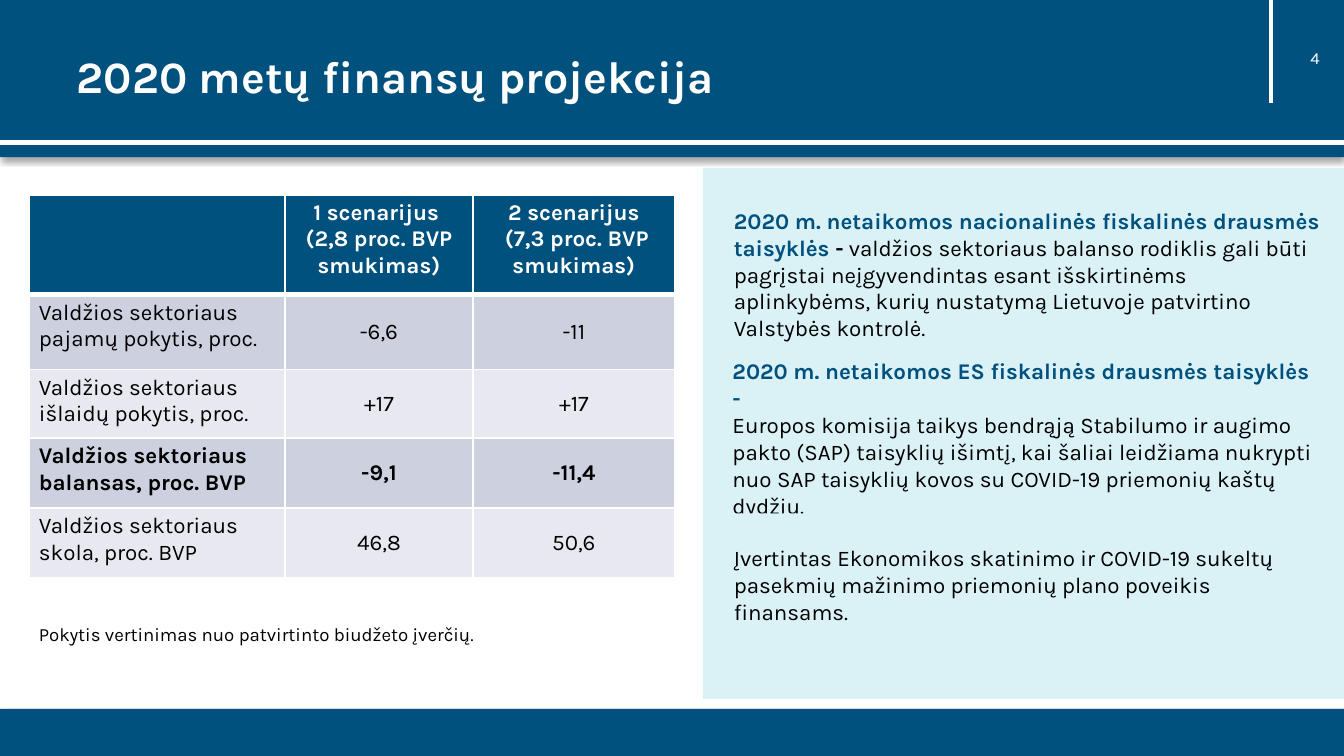
from copy import deepcopy
from typing import NamedTuple

from lxml import etree
from pptx import Presentation
from pptx.dml.color import RGBColor
from pptx.enum import shapes as kinds, text as tx
from pptx.oxml import parse_xml
from pptx.oxml.ns import nsdecls, qn
from pptx.util import Inches, Pt

NAVY, WHITE, BLACK, PALE = "00517D", "FFFFFF", "000000", "DAF1F6"
DARK, LIGHT = "CDD1DF", "E8E9F0"
LEFT, MID, RIGHT = tx.PP_ALIGN.LEFT, tx.PP_ALIGN.CENTER, tx.PP_ALIGN.RIGHT
WIDE = 10
HIGH = WIDE * 9 / 16


class Box(NamedTuple):
    left: float
    top: float
    width: float
    height: float

    def place(self) -> list:
        return [Inches(n) for n in self]


class Piece(NamedTuple):
    text: str
    color: str = BLACK
    bold: bool = False
    size: float = 12


class Note(NamedTuple):
    box: Box
    paras: list


class Row(NamedTuple):
    height: float
    fill: str
    cells: tuple
    bold: bool = False
    color: str = BLACK


def paint(target, color: str) -> None:
    """Give a fill one solid colour."""
    target.solid()
    target.fore_color.rgb = RGBColor.from_string(color)


def inset(target) -> None:
    """Set the margins of a text frame or a table cell."""
    target.margin_left = target.margin_right = Inches(0.07)
    target.margin_top = target.margin_bottom = Inches(0.04)


def write(frame, paras: list, align=LEFT) -> None:
    """Write paragraphs of pieces; \\v in a piece breaks the line."""
    for i, pieces in enumerate(paras):
        para = frame.add_paragraph() if i else frame.paragraphs[0]
        para.alignment = align
        for piece in pieces:
            for j, part in enumerate(piece.text.split("\v")):
                if j:
                    para.add_line_break()
                run = para.add_run()
                run.text = part
                font = run.font
                font.name, font.size, font.bold = "Karla", Pt(piece.size), piece.bold
                paint(font.fill, piece.color)
                if j:
                    # The break takes the type size of its neighbour
                    run._r.getprevious().append(deepcopy(run._r.rPr))


def fill(frame, paras: list, align=LEFT) -> None:
    """Write into the frame of a shape, centred from top to bottom."""
    frame.word_wrap = True
    frame.vertical_anchor = tx.MSO_ANCHOR.MIDDLE
    inset(frame)
    write(frame, paras, align)


def block(slide, box: Box, color: str):
    shape = slide.shapes.add_shape(kinds.MSO_SHAPE.RECTANGLE, *box.place())
    shape.shadow.inherit = False
    paint(shape.fill, color)
    shape.line.fill.background()
    return shape


def band(slide, box: Box) -> None:
    """Draw a navy band with a soft shadow below it."""
    shape = block(slide, box, NAVY)
    glow = shape._element.spPr.find(qn("a:effectLst"))
    glow.append(parse_xml(
        f'<a:outerShdw {nsdecls("a")} blurRad="{Pt(3.1)}" dist="{Pt(1.8)}" '
        'dir="5400000" rotWithShape="0"><a:srgbClr val="000000">'
        '<a:alpha val="35000"/></a:srgbClr></a:outerShdw>'))


def rule(slide, x1: float, y1: float, x2: float, y2: float) -> None:
    line = slide.shapes.add_connector(
        kinds.MSO_CONNECTOR.STRAIGHT, *(Inches(n) for n in (x1, y1, x2, y2)))
    paint(line.line.fill, WHITE)
    line.line.width = Pt(2.25)
    etree.SubElement(line._element.spPr, qn("a:effectLst"))


def label(slide, box: Box, piece: Piece, align=LEFT):
    frame = slide.shapes.add_textbox(*box.place()).text_frame
    fill(frame, [[piece]], align)
    return frame


def edge(cell, low: float) -> None:
    """Draw white cell borders, the bottom one low points wide."""
    props = cell._tc.get_or_add_tcPr()
    for side, width in zip("LRTB", (1, 1, 1, low)):
        props.append(parse_xml(
            f'<a:ln{side} {nsdecls("a")} w="{Pt(width)}"><a:solidFill>'
            f'<a:srgbClr val="{WHITE}"/></a:solidFill></a:ln{side}>'))


def grid(slide, box: Box, widths: tuple, rows: list) -> None:
    table = slide.shapes.add_table(len(rows), len(widths), *box.place()).table
    for col, width in zip(table.columns, widths):
        col.width = Inches(width)
    for i, row in enumerate(rows):
        table.rows[i].height = Inches(row.height)
        for j, words in enumerate(row.cells):
            cell = table.cell(i, j)
            edge(cell, 1 if i else 3)
            paint(cell.fill, row.fill)
            inset(cell)
            if words:
                write(cell.text_frame, [[Piece(words, row.color, row.bold)]],
                      MID if j else LEFT)
            if i and j:
                cell.vertical_anchor = tx.MSO_ANCHOR.MIDDLE


ROWS = [
    Row(0.74, NAVY, ("", "1 scenarijus \v(2,8 proc. BVP smukimas)",
                     "2 scenarijus\v (7,3 proc. BVP smukimas)"), True, WHITE),
    Row(0.56, DARK, ("Valdžios sektoriaus pajamų pokytis, proc.", "-6,6", "-11")),
    Row(0.51, LIGHT, ("Valdžios sektoriaus išlaidų pokytis, proc.", "+17", "+17")),
    Row(0.52, DARK, ("Valdžios sektoriaus balansas, proc. BVP", "-9,1", "-11,4"), True),
    Row(0.52, LIGHT, ("Valdžios sektoriaus skola, proc. BVP", "46,8", "50,6")),
]

NOTES = [
    Note(Box(5.39, 1.54, 4.51, 1), [[
        Piece("2020 m. netaikomos nacionalinės fiskalinės drausmės taisyklės ", NAVY, True),
        Piece("-", BLACK, True),
        Piece(" valdžios sektoriaus balanso rodiklis gali būti pagrįstai "
              "neįgyvendintas esant išskirtinėms aplinkybėms, kurių nustatymą "
              "Lietuvoje patvirtino Valstybės kontrolė.")]]),
    Note(Box(5.38, 2.73, 4.51, 1.06), [
        [Piece("2020 m. netaikomos ES fiskalinės drausmės taisyklės -", NAVY, True)],
        [Piece("Europos komisija taikys bendrąją Stabilumo ir augimo pakto (SAP) "
               "taisyklių išimtį, kai šaliai leidžiama nukrypti nuo SAP taisyklių "
               "kovos su COVID-19 priemonių kaštų dydžiu.")]]),
    Note(Box(5.39, 3.82, 4.51, 1.06), [[
        Piece("Įvertintas Ekonomikos skatinimo ir COVID-19 sukeltų pasekmių "
              "mažinimo priemonių plano poveikis finansams.")]]),
]


def main() -> None:
    deck = Presentation()
    deck.slide_width, deck.slide_height = Inches(WIDE), Inches(HIGH)
    slide = deck.slides.add_slide(deck.slide_layouts[6])

    band(slide, Box(0, 0, WIDE, 1.17))
    band(slide, Box(0, HIGH - 0.35, WIDE, 0.35))
    rule(slide, 9.46, 0, 9.46, 0.77)
    rule(slide, 0, 1.06, WIDE, 1.06)
    block(slide, Box(5.23, 1.25, 4.77, 3.95), PALE)

    title = label(slide, Box(0.5, 0.28, 8.95, 0.61),
                  Piece("2020 metų finansų projekcija", WHITE, True, 24))
    title.paragraphs[0].line_spacing = 0.9
    for note in NOTES[:2]:
        fill(block(slide, note.box, PALE).text_frame, note.paras)
    grid(slide, Box(0.22, 1.45, 4.8, 2.85), (1.9, 1.4, 1.5), ROWS)
    last = NOTES[2]
    fill(block(slide, last.box, PALE).text_frame, last.paras)
    foot = label(slide, Box(0.22, 4.6, 3.44, 0.24),
                 Piece("Pokytis vertinimas nuo patvirtinto biudžeto įverčių.", size=10))
    foot.word_wrap = False
    foot.auto_size = tx.MSO_AUTO_SIZE.SHAPE_TO_FIT_TEXT
    label(slide, Box(9.46, 0.28, 0.43, 0.3), Piece("4", WHITE, size=9), RIGHT)
    deck.save("out.pptx")


if __name__ == "__main__":
    main()
